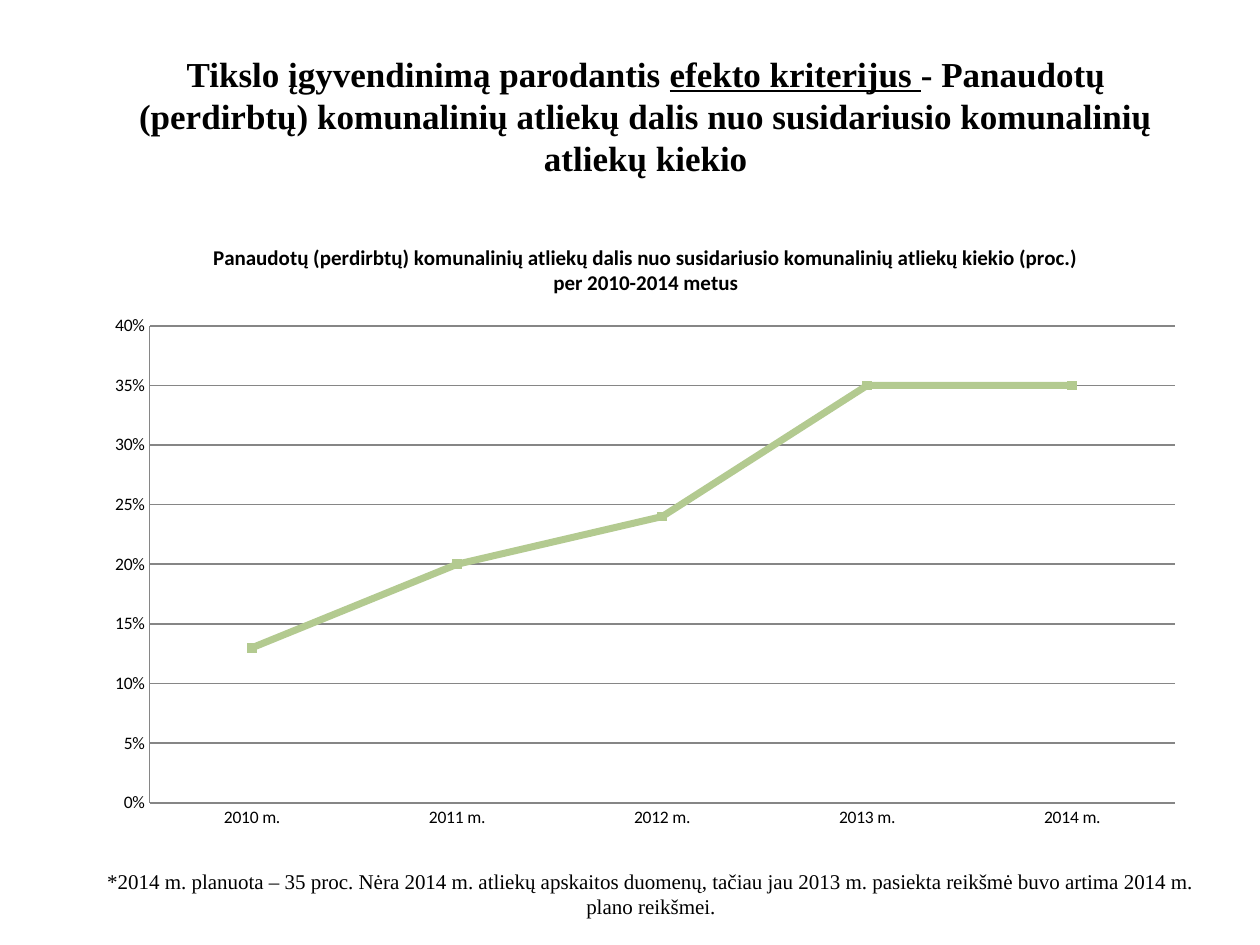
import pptx
import pptx.util
import pptx.chart.data
import pptx.dml.color
import pptx.enum.chart
import pptx.enum.text
import pptx.oxml

BLACK = pptx.dml.color.RGBColor(0, 0, 0)
GREEN = pptx.dml.color.RGBColor(0xB3, 0xCA, 0x90)
GRAY = pptx.dml.color.RGBColor(0x86, 0x86, 0x86)
WIDE, HIGH = pptx.util.Inches(10), pptx.util.Inches(7.5)
COLS, ROWS = 40, 30
SERIF, SANS = "Times New Roman", "Calibri"

HEAD = [
    ("Tikslo įgyvendinimą parodantis ", False),
    ("efekto kriterijus ", True),
    ("- Panaudotų (perdirbtų) komunalinių atliekų dalis nuo "
     "susidariusio komunalinių atliekų kiekio", False),
]
NOTE = [("*2014 m. planuota – 35 proc. Nėra 2014 m. atliekų apskaitos duomenų, "
         "tačiau jau 2013 m. pasiekta reikšmė buvo artima 2014 m. plano reikšmei.", False)]
TITLE = ("Panaudotų (perdirbtų) komunalinių atliekų dalis nuo susidariusio "
         "komunalinių atliekų kiekio (proc.) per 2010-2014 metus")
SHARES = {2010: 0.13, 2011: 0.2, 2012: 0.24, 2013: 0.35, 2014: 0.35}


def scale(box):
    """Turn grid columns and rows into lengths."""
    col, row = WIDE / COLS, HIGH / ROWS
    return [int(part * unit) for part, unit in zip(box, (col, row, col, row))]


def style(font, size, name, bold=False):
    """Set the look of a font."""
    font.size = pptx.util.Pt(size)
    font.name = name
    font.bold = bold
    font.color.rgb = BLACK


def add_text(slide, box, runs, size, bold=False):
    """Place a centred block of runs in the box."""
    frame = slide.shapes.add_textbox(*scale(box)).text_frame
    frame.word_wrap = True
    frame.vertical_anchor = pptx.enum.text.MSO_ANCHOR.MIDDLE
    para = frame.paragraphs[0]
    para.alignment = pptx.enum.text.PP_ALIGN.CENTER
    for text, under in runs:
        run = para.add_run()
        run.text = text
        style(run.font, size, SERIF, bold)
        run.font.underline = under


def set_plot(chart, box):
    """Fix the inner plot to a box given as shares of the chart."""
    parts = "".join(f'<c:{key}Mode val="edge"/>' for key in "xy")
    parts += "".join(f'<c:{key} val="{val}"/>' for key, val in zip("xywh", box))
    node = pptx.oxml.parse_xml(
        '<c:layout xmlns:c="http://schemas.openxmlformats.org/drawingml/2006/chart">'
        f'<c:manualLayout><c:layoutTarget val="inner"/>{parts}</c:manualLayout></c:layout>')
    area = chart.element.chart.plotArea
    for old in area.xpath("c:layout"):
        area.remove(old)
    area.insert(0, node)


def add_graph(slide, box):
    """Place the line chart of yearly shares in the box."""
    data = pptx.chart.data.CategoryChartData(number_format="0%")
    data.categories = [f"{year} m." for year in SHARES]
    data.add_series("Series 1", SHARES.values())
    kind = pptx.enum.chart.XL_CHART_TYPE.LINE_MARKERS
    chart = slide.shapes.add_chart(kind, *scale(box), data).chart
    style(chart.font, 10, SANS)
    chart.has_legend = False
    chart.has_title = True
    run = chart.chart_title.text_frame.paragraphs[0].add_run()
    run.text = TITLE
    style(run.font, 12, SANS, True)
    chart.chart_title.include_in_layout = False
    set_plot(chart, (0.05, 0.17, 0.93, 0.77))

    axis = chart.value_axis
    axis.minimum_scale, axis.maximum_scale, axis.major_unit = 0, 0.4, 0.05
    axis.tick_labels.number_format = "0%"
    axis.tick_labels.number_format_is_linked = False
    for part in (chart.category_axis, axis, axis.major_gridlines):
        part.format.line.color.rgb = GRAY
        part.format.line.width = pptx.util.Pt(0.85)
    for part in (chart.category_axis, axis):
        part.major_tick_mark = pptx.enum.chart.XL_TICK_MARK.NONE

    chart.plots[0].vary_by_categories = False
    line = chart.plots[0].series[0]
    line.smooth = False
    line.format.line.color.rgb = GREEN
    line.format.line.width = pptx.util.Pt(4)
    mark = line.marker
    mark.style = pptx.enum.chart.XL_MARKER_STYLE.SQUARE
    mark.size = 5
    mark.format.fill.solid()
    mark.format.fill.fore_color.rgb = GREEN
    mark.format.line.color.rgb = GREEN


def main():
    """Build and save the slide."""
    deck = pptx.Presentation()
    deck.slide_width, deck.slide_height = WIDE, HIGH
    slide = deck.slides.add_slide(deck.slide_layouts[6])
    add_text(slide, (2.67, 26.87, 36, 3), NOTE, 12)
    add_text(slide, (3, 1, 35, 5.33), HEAD, 20, True)
    add_graph(slide, (3, 7, 35, 19.67))
    deck.save("out.pptx")


if __name__ == "__main__":
    main()
